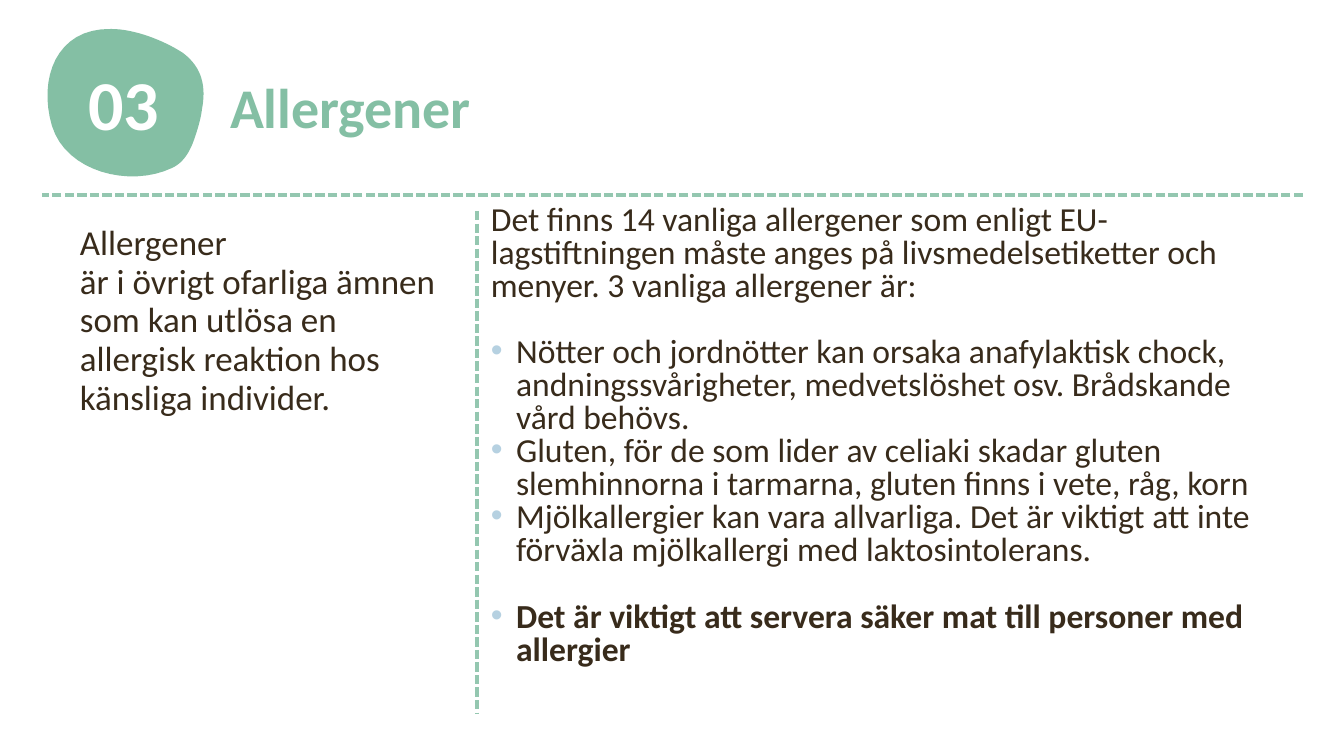
from lxml import etree
from pptx import Presentation
from pptx.dml.color import RGBColor
from pptx.enum.dml import MSO_LINE
from pptx.enum.shapes import MSO_CONNECTOR
from pptx.enum.text import MSO_ANCHOR, MSO_AUTO_SIZE, PP_ALIGN
from pptx.oxml.ns import qn
from pptx.util import Inches, Pt

STRAIGHT = MSO_CONNECTOR.STRAIGHT
DASH = MSO_LINE.SQUARE_DOT
TOP, MIDDLE = MSO_ANCHOR.TOP, MSO_ANCHOR.MIDDLE
LEFT, CENTER = PP_ALIGN.LEFT, PP_ALIGN.CENTER
NO_FIT = MSO_AUTO_SIZE.NONE

FONT = "Calibri"
GREEN, RULE, BROWN, BULLET, WHITE = "84BFA4", "94C7B0", "382B1B", "B6D1E1", "FFFFFF"
LIST_LEADING = Pt(23.6)

BLOB_START = (154, 80)
BLOB_CURVES = [
    ((158, 59), (155, 39), (135, 24)),
    ((115, 11), (86, 0), (63, 0)),
    ((8, -1), (-10, 50), (4, 97)),
    ((18, 143), (82, 159), (124, 139)),
    ((137, 133), (143, 120), (147, 108)),
    ((150, 99), (153, 89), BLOB_START),
]
DEFINITION = [
    "Allergener ",
    "är i övrigt ofarliga ämnen som kan utlösa en allergisk reaktion hos känsliga individer.",
]
INTRO = ("Det finns 14 vanliga allergener som enligt EU-lagstiftningen måste anges på "
         "livsmedelsetiketter och menyer. 3 vanliga allergener är:")
ALLERGENS = [
    "Nötter och jordnötter kan orsaka anafylaktisk chock, andningssvårigheter, "
    "medvetslöshet osv. Brådskande vård behövs.",
    "Gluten, för de som lider av celiaki skadar gluten slemhinnorna i tarmarna, "
    "gluten finns i vete, råg, korn",
    "Mjölkallergier kan vara allvarliga. Det är viktigt att inte förväxla "
    "mjölkallergi med laktosintolerans.",
]
REMINDER = "Det är viktigt att servera säker mat till personer med allergier"


def px(n):
    return round(n * 914400 / 100.8)


def color(value):
    return RGBColor.from_string(value)


def prepare_frame(sp, anchor=TOP):
    tf = sp.text_frame
    tf.word_wrap = True
    tf.auto_size = NO_FIT
    tf.vertical_anchor = anchor
    return tf


def add_frame(slide, x, y, w, h, anchor=TOP):
    return prepare_frame(slide.shapes.add_textbox(px(x), px(y), px(w), px(h)), anchor)


def add_run(p, text, size, fill, bold=False):
    r = p.add_run()
    r.text = text
    r.font.name = FONT
    r.font.size = Pt(size)
    r.font.bold = bold
    r.font.color.rgb = color(fill)


def set_bullet(p):
    pPr = p._p.get_or_add_pPr()
    pPr.set("marL", str(Inches(0.25)))
    pPr.set("indent", str(-Inches(0.25)))
    fill = etree.SubElement(pPr, qn("a:buClr"))
    etree.SubElement(fill, qn("a:srgbClr"), val=BULLET)
    etree.SubElement(pPr, qn("a:buFont"), typeface="Arial")
    etree.SubElement(pPr, qn("a:buChar"), char="•")


def add_rule(slide, x1, y1, x2, y2):
    line = slide.shapes.add_connector(STRAIGHT, px(x1), px(y1), px(x2), px(y2))
    line.line.color.rgb = color(RULE)
    line.line.width = Pt(2.25)
    line.line.dash_style = DASH
    etree.SubElement(line._element.spPr, qn("a:effectLst"))


def curve_points(start, curves, steps=16):
    """Points along a chain of cubic Bézier curves."""
    points = []
    for a, b, end in curves:
        for i in range(1, steps + 1):
            t = i / steps
            u = 1 - t
            points.append(tuple(
                u**3 * s + 3 * u * u * t * c + 3 * u * t * t * d + t**3 * e
                for s, c, d, e in zip(start, a, b, end)))
        start = end
    return points


def add_badge(slide, x, y, number):
    def place(point):
        return px(x + point[0]), px(y + point[1])

    builder = slide.shapes.build_freeform(*place(BLOB_START))
    outline = curve_points(BLOB_START, BLOB_CURVES)
    builder.add_line_segments([place(point) for point in outline], close=True)
    blob = builder.convert_to_shape()
    blob.shadow.inherit = False
    blob.fill.solid()
    blob.fill.fore_color.rgb = color(GREEN)
    blob.line.fill.background()

    p = add_frame(slide, x - 9, y + 31, 170, 95, MIDDLE).paragraphs[0]
    p.alignment = CENTER
    p.line_spacing = 0.9
    add_run(p, number, 50, WHITE, True)


def add_title(slide, x, y, w, h, text):
    sp = slide.shapes.title
    sp.left, sp.top, sp.width, sp.height = px(x), px(y), px(w), px(h)
    p = prepare_frame(sp).paragraphs[0]
    p.alignment = LEFT
    p.line_spacing = Pt(40.2)
    add_run(p, text, 40, GREEN, True)


def add_definition(slide, x, y, w, h):
    p = add_frame(slide, x, y, w, h).paragraphs[0]
    p.line_spacing = Pt(27.6)
    term, meaning = DEFINITION
    add_run(p, term, 25, BROWN)
    p.add_line_break()
    add_run(p, meaning, 25, BROWN)


def add_allergen_list(slide, x, y, w, h):
    tf = add_frame(slide, x, y, w, h)
    p = tf.paragraphs[0]
    p.line_spacing = p.space_after = LIST_LEADING
    add_run(p, INTRO, 24, BROWN)
    for text in [*ALLERGENS, REMINDER]:
        important = text == REMINDER
        p = tf.add_paragraph()
        p.line_spacing = LIST_LEADING
        p.space_before = LIST_LEADING if important else Pt(0)
        set_bullet(p)
        add_run(p, text, 24, BROWN, important)


def build_slide(prs):
    slide = prs.slides.add_slide(prs.slide_layouts[5])
    add_title(slide, 220, 78, 527, 83, "Allergener")
    add_definition(slide, 70, 219, 386, 221)
    add_rule(slide, 477, 211, 477, 713)
    add_allergen_list(slide, 481, 200, 797, 400)
    add_rule(slide, 1303, 195, 42, 195)
    add_badge(slide, 48, 29, "03")


def main():
    prs = Presentation()
    prs.slide_width, prs.slide_height = px(1344), px(756)
    build_slide(prs)
    prs.save("out.pptx")


if __name__ == "__main__":
    main()
